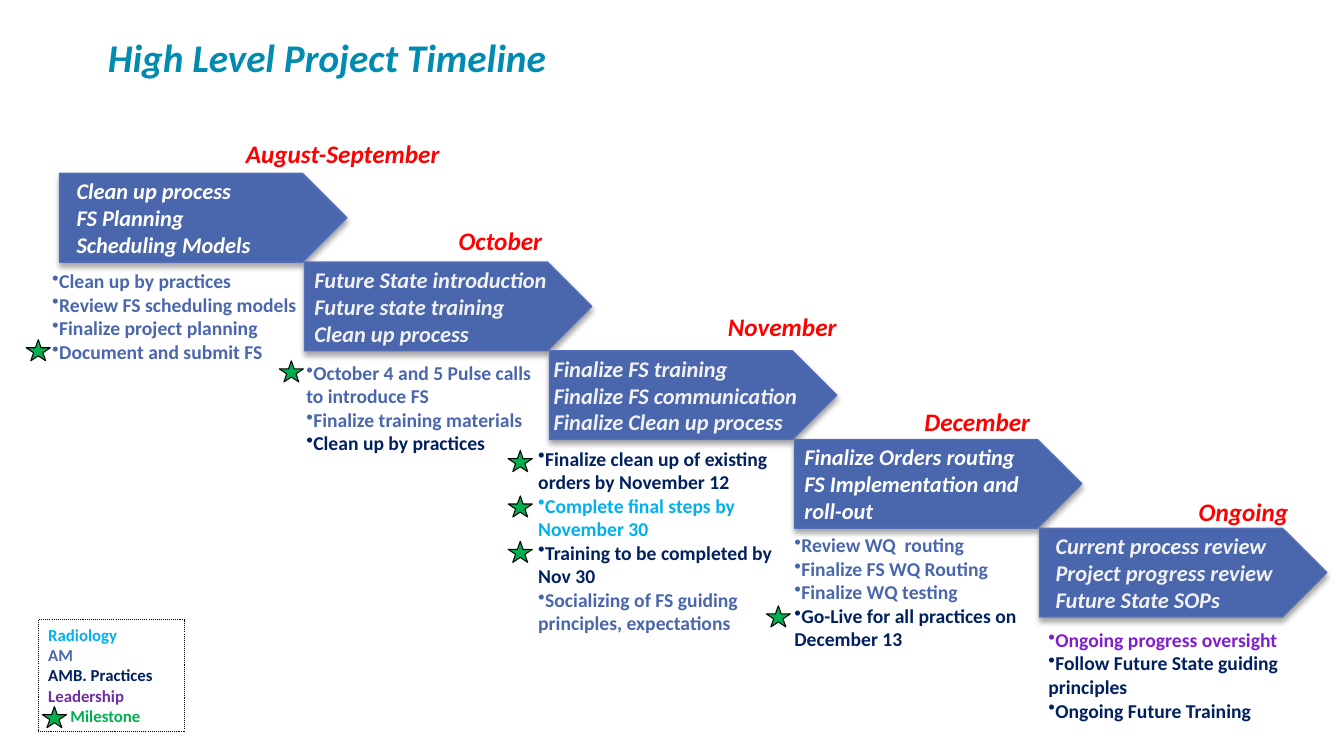
from dataclasses import dataclass

from lxml import etree
from pptx import Presentation
from pptx.dml.color import RGBColor
from pptx.enum.dml import MSO_LINE
from pptx.enum.shapes import MSO_SHAPE
from pptx.enum.text import MSO_ANCHOR, PP_ALIGN
from pptx.oxml.ns import qn
from pptx.util import Inches, Pt

PENTAGON, STAR, RECTANGLE = MSO_SHAPE.PENTAGON, MSO_SHAPE.STAR_5_POINT, MSO_SHAPE.RECTANGLE
DOTTED = MSO_LINE.ROUND_DOT
LEFT = PP_ALIGN.LEFT
TOP, MIDDLE = MSO_ANCHOR.TOP, MSO_ANCHOR.MIDDLE

BLUE = RGBColor(0x4A, 0x66, 0xAC)
EDGE_BLUE = RGBColor(0x56, 0x6E, 0xB5)
TEAL = RGBColor(0x00, 0x8B, 0xB0)
SKY = RGBColor(0x00, 0xB0, 0xF0)
NAVY = RGBColor(0x00, 0x20, 0x60)
VIOLET = RGBColor(0x81, 0x1F, 0xCC)
PURPLE = RGBColor(0x70, 0x30, 0xA0)
GREEN = RGBColor(0x00, 0xB0, 0x50)
RED = RGBColor(0xFF, 0x00, 0x00)
BLACK = RGBColor(0x00, 0x00, 0x00)
WHITE = RGBColor(0xFF, 0xFF, 0xFF)
PALE = RGBColor(0xF2, 0xF2, 0xF2)

FONT = "Calibri"
# Each stage starts one column right of and one row below the last.
FIRST_LEFT, FIRST_TOP = 0.59, 1.72
COLUMN, ROW = 2.43, 0.88
ARROW_WIDTH = 2.85
STAR_WIDTH, STAR_HEIGHT = 0.24, 0.21


@dataclass
class Stage:
    """One step; month, list and star places are offsets from its arrow."""
    month: str
    month_offset: tuple
    goals: list
    goal_color: RGBColor
    goal_inset: float
    tasks: list
    task_box: tuple
    stars: list


STAGES = [
    Stage("August-September", (1.75, -0.4),
          ["Clean up process", "FS Planning", "Scheduling Models"], WHITE, 0.17,
          [("Clean up by practices", BLUE), ("Review FS scheduling models", BLUE),
           ("Finalize project planning", BLUE), ("Document and submit FS", BLUE)],
          (-0.17, 0.9, 3, 1.04), [(-0.33, 1.65)]),
    Stage("October", (1.43, -0.41),
          ["Future State introduction", "Future state training", "Clean up process"], PALE, 0.1,
          [("October 4 and 5 Pulse calls to introduce FS", BLUE),
           ("Finalize training materials", BLUE), ("Clean up by practices", NAVY)],
          (-0.08, 0.93, 2.63, 1.04), [(-0.25, 0.98)]),
    Stage("November", (1.67, -0.44),
          ["Finalize FS training", "Finalize FS communication", "Finalize Clean up process"],
          PALE, 0.04,
          [("Finalize clean up of existing orders by November 12", NAVY),
           ("Complete final steps by November 30", SKY),
           ("Training to be completed by Nov 30", NAVY),
           ("Socializing of FS guiding principles, expectations", BLUE)],
          (-0.21, 0.9, 2.64, 1.99), [(-0.41, 0.99), (-0.41, 1.44), (-0.41, 1.89)]),
    Stage("December", (1.19, -0.38),
          ["Finalize Orders routing", "FS Implementation and roll-out"], WHITE, 0.1,
          [("Review WQ  routing", BLUE), ("Finalize FS WQ Routing", BLUE),
           ("Finalize WQ testing", BLUE), ("Go-Live for all practices on December 13", NAVY)],
          (-0.1, 0.88, 2.51, 1.28), [(-0.28, 1.65)]),
    Stage("Ongoing", (1.48, -0.37),
          ["Current process review", "Project progress review", "Future State SOPs"], PALE, 0.16,
          [("Ongoing progress oversight", VIOLET),
           ("Follow Future State guiding principles", NAVY),
           ("Ongoing Future Training", NAVY)],
          (-0.01, 0.94, 3.06, 1.04), []),
]

LEGEND = [("Radiology", SKY), ("AM", BLUE), ("AMB. Practices", NAVY),
          ("Leadership", PURPLE), ("Milestone", GREEN)]


def write_lines(shape, lines, size, italic=False, bullets=False, anchor=TOP):
    """Fill a shape with (text, colour) lines, one paragraph each."""
    frame = shape.text_frame
    frame.word_wrap = True
    frame.vertical_anchor = anchor
    frame.text = "\n".join(text for text, _ in lines)
    for paragraph, (_, color) in zip(frame.paragraphs, lines):
        paragraph.alignment = LEFT
        if bullets:
            properties = paragraph._p.get_or_add_pPr()
            properties.set("marL", "0")
            properties.set("indent", "0")
            etree.SubElement(properties, qn("a:buChar"), char="•")
        font = paragraph.runs[0].font
        font.name, font.size = FONT, Pt(size)
        font.bold, font.italic = True, italic
        font.color.rgb = color


def add_text(slide, box, lines, size, **style):
    shape = slide.shapes.add_textbox(*map(Inches, box))
    write_lines(shape, lines, size, **style)


def add_outlined(slide, kind, box, fill, line, line_width):
    shape = slide.shapes.add_shape(kind, *map(Inches, box))
    shape.shadow.inherit = False
    if fill is None:
        shape.fill.background()
    else:
        shape.fill.solid()
        shape.fill.fore_color.rgb = fill
    shape.line.color.rgb = line
    shape.line.width = Pt(line_width)
    return shape


def add_star(slide, left, top):
    add_outlined(slide, STAR, (left, top, STAR_WIDTH, STAR_HEIGHT), GREEN, BLACK, 0.75)


def add_drop_shadow(shape):
    effects = shape._element.spPr.find(qn("a:effectLst"))
    shadow = etree.SubElement(effects, qn("a:outerShdw"), blurRad=str(Pt(4)),
                              dist=str(Pt(3)), dir="5400000", rotWithShape="0")
    color = etree.SubElement(shadow, qn("a:srgbClr"), val=str(BLACK))
    etree.SubElement(color, qn("a:alpha"), val="35000")


def add_arrow(slide, left, top, stage):
    arrow = add_outlined(slide, PENTAGON, (left, top, ARROW_WIDTH, ROW), BLUE, EDGE_BLUE, 1)
    add_drop_shadow(arrow)
    frame = arrow.text_frame
    frame.margin_left = Inches(stage.goal_inset)
    frame.margin_right = frame.margin_top = frame.margin_bottom = 0
    write_lines(arrow, [(goal, stage.goal_color) for goal in stage.goals], 16,
                italic=True, anchor=MIDDLE)


def add_stage(slide, index, stage):
    left, top = FIRST_LEFT + index * COLUMN, FIRST_TOP + index * ROW
    add_arrow(slide, left, top, stage)
    month_x, month_y = stage.month_offset
    add_text(slide, (left + month_x, top + month_y, 2.18 if index == 0 else 1.42, 0.4),
             [(stage.month, RED)], 18, italic=True)
    task_x, task_y, width, height = stage.task_box
    add_text(slide, (left + task_x, top + task_y, width, height), stage.tasks, 14, bullets=True)
    for star_x, star_y in stage.stars:
        add_star(slide, left + star_x, top + star_y)


def add_legend(slide):
    legend = add_outlined(slide, RECTANGLE, (0.38, 6.15, 1.45, 1.11), None, BLACK, 0.75)
    legend.line.dash_style = DOTTED
    write_lines(legend, LEGEND, 12)
    milestone = legend.text_frame.paragraphs[-1]
    milestone._p.get_or_add_pPr().set("marL", str(Inches(0.22)))
    add_star(slide, 0.42, 7.01)


def add_title(slide):
    title = slide.shapes.title
    title.left, title.top, title.width, title.height = map(Inches, (0.97, 0.2, 11.69, 0.72))
    write_lines(title, [("High Level Project Timeline", TEAL)], 28, italic=True, anchor=MIDDLE)


def main():
    presentation = Presentation()
    presentation.slide_width, presentation.slide_height = Inches(13.33), Inches(7.5)
    slide = presentation.slides.add_slide(presentation.slide_layouts.get_by_name("Title Only"))
    add_title(slide)
    for index, stage in enumerate(STAGES):
        add_stage(slide, index, stage)
    add_legend(slide)
    presentation.save("out.pptx")


if __name__ == "__main__":
    main()
